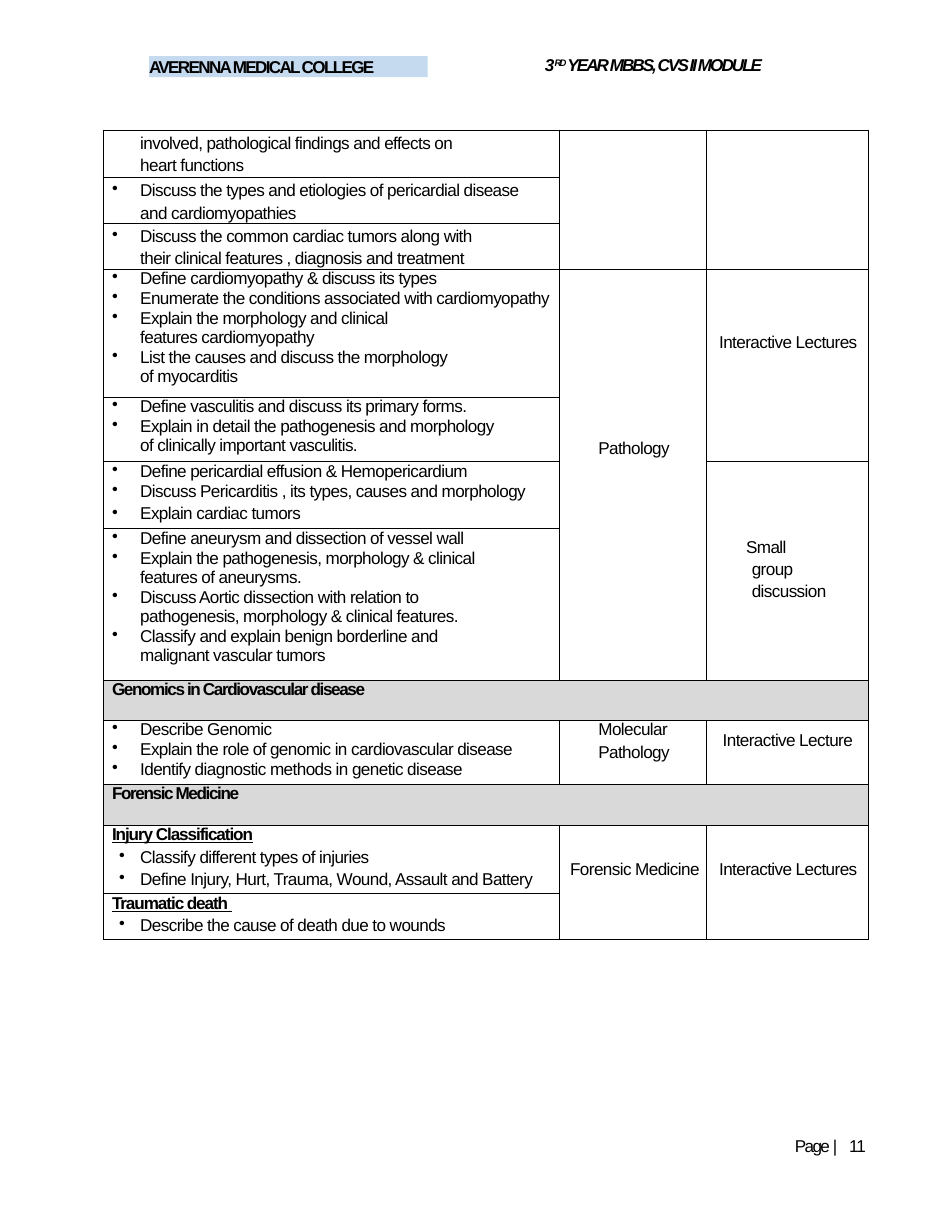
from lxml.etree import SubElement
from pptx import Presentation
from pptx.dml.color import RGBColor
from pptx.enum.text import MSO_ANCHOR, MSO_AUTO_SIZE, PP_ALIGN
from pptx.oxml.ns import qn
from pptx.util import Cm, Pt

# Paragraph styles: left and first indent in cm, spacing in points
LOOKS = {
    "plain": dict(),
    "wide": dict(left=0.84, lead=14.6),
    "dot": dict(left=0.84, first=-0.64, gap=0.6, dot=True),
    "loose": dict(left=0.84, first=-0.64, lead=14.6, gap=0.2, dot=True),
    "late": dict(left=0.84, first=-0.64, gap=2.4, dot=True),
    "inner": dict(left=0.84, first=-0.48, gap=2, dot=True),
    "head": dict(left=0.2, bold=True, track=-0.9),
    "under": dict(left=0.2, bold=True, underline=True, track=-0.7),
    "group": dict(left=1.02, first=-0.13, lead=1.17),
    "mid": dict(left=0.89, gap=2.2),
}

COLS = [10.34, 3.35, 3.66]
ROWS = [1.07, 1.04, 1.04, 2.9, 1.47, 1.52, 3.43, 0.91, 1.45, 0.94, 1.55, 1.04]

# First column, one list of (style, text) for each row
TOPICS = [
    [("wide", "involved, pathological findings and effects on\vheart functions")],
    [("loose", "Discuss the types and etiologies of pericardial disease\vand cardiomyopathies")],
    [("loose", "Discuss the common cardiac tumors along with\v"
               "their clinical features , diagnosis and treatment")],
    [("dot", "Define cardiomyopathy & discuss its types"),
     ("dot", "Enumerate the conditions associated with cardiomyopathy"),
     ("dot", "Explain the morphology and clinical\vfeatures cardiomyopathy"),
     ("dot", "List the causes and discuss the morphology\vof myocarditis")],
    [("dot", "Define vasculitis and discuss its primary forms."),
     ("dot", "Explain in detail the pathogenesis and morphology\v"
             "of clinically important vasculitis.")],
    [("dot", "Define pericardial effusion & Hemopericardium"),
     ("dot", "Discuss Pericarditis , its types, causes and morphology"),
     ("late", "Explain cardiac tumors")],
    [("dot", "Define aneurysm and dissection of vessel wall"),
     ("dot", "Explain the pathogenesis, morphology & clinical\vfeatures of aneurysms."),
     ("dot", "Discuss Aortic dissection with relation to\v"
             "pathogenesis, morphology & clinical features."),
     ("dot", "Classify and explain benign borderline and\vmalignant vascular tumors")],
    [("head", "Genomics in Cardiovascular disease")],
    [("dot", "Describe Genomic"),
     ("dot", "Explain the role of genomic in cardiovascular disease"),
     ("dot", "Identify diagnostic methods in genetic disease")],
    [("head", "Forensic Medicine")],
    [("under", "Injury Classification"),
     ("inner", "Classify different types of injuries"),
     ("inner", "Define Injury, Hurt, Trauma, Wound, Assault and Battery")],
    [("under", "Traumatic death "),
     ("inner", "Describe the cause of death due to wounds")],
]

# Other columns: row, column, rows spanned, left and bottom inset, paragraphs
SIDES = [
    (0, 1, 3, 0, 0, []),
    (0, 2, 3, 0, 0, []),
    (3, 1, 4, 0.89, 1.17, [("plain", "Pathology")]),
    (3, 2, 2, 0.28, 1.02, [("plain", "Interactive Lectures")]),
    (5, 2, 2, 0, 0.13, [("group", "Small\vgroup\vdiscussion")]),
    (8, 1, 1, 0, 0.5, [("mid", "Molecular"), ("mid", "Pathology")]),
    (8, 2, 1, 0.36, 0.5, [("plain", "Interactive Lecture")]),
    (10, 1, 2, 0.25, 0.58, [("plain", "Forensic Medicine")]),
    (10, 2, 2, 0.28, 0.58, [("plain", "Interactive Lectures")]),
]
BANDS = [7, 9]


def tint(code):
    return RGBColor.from_string(code)


class Page:
    font = dict(name="Arial", size=Pt(11), bold=False, italic=False, underline=False)
    ink, rule, band, banner = "000000", "000000", "D9D9D9", "C5D9EF"

    def __init__(self, deck):
        self.slide = deck.slides.add_slide(deck.slide_layouts[5])

    def run(self, para, text, track=-0.4, base=0, **form):
        for num, line in enumerate(text.split("\v")):
            if num:
                para.add_line_break()
            run = para.add_run()
            run.text = line
            for key, val in {**self.font, **form}.items():
                setattr(run.font, key, val)
            run.font.color.rgb = tint(self.ink)
            props = run._r.get_or_add_rPr()
            props.set("spc", str(round(track * 100)))
            if base:
                props.set("baseline", str(base * 1000))

    def para(self, para, text, left=0, first=0, gap=0, lead=1.0, dot=False, **form):
        size = lead if lead < 5 else Pt(lead)
        for key, val in dict(alignment=PP_ALIGN.LEFT, space_before=Pt(gap),
                             line_spacing=size).items():
            setattr(para, key, val)
        props = para._p.get_or_add_pPr()
        props.set("marL", str(Cm(left)))
        props.set("indent", str(Cm(first)))
        if dot:
            SubElement(props, qn("a:buChar"), char="•")
        self.run(para, text, **form)

    def frame(self, frame):
        for key, val in dict(margin_left=0, margin_right=0, margin_top=0,
                             margin_bottom=0, word_wrap=True,
                             auto_size=MSO_AUTO_SIZE.NONE,
                             vertical_anchor=MSO_ANCHOR.TOP).items():
            setattr(frame, key, val)
        return frame.paragraphs[0]

    def title(self, text, *place):
        shape = self.slide.shapes.title
        for key, val in zip(("left", "top", "width", "height"), place):
            setattr(shape, key, Cm(val))
        shape.fill.solid()
        shape.fill.fore_color.rgb = tint(self.banner)
        self.para(self.frame(shape.text_frame), text, bold=True, track=-1.1)

    def label(self, parts, *place):
        box = self.slide.shapes.add_textbox(*map(Cm, place))
        para = self.frame(box.text_frame)
        for text, form in parts:
            self.run(para, text, **form)

    def cell(self, cell, items, left=0, low=0, anchor=MSO_ANCHOR.TOP):
        for key, val in dict(margin_left=Cm(left), margin_right=0, margin_top=0,
                             margin_bottom=Cm(low), vertical_anchor=anchor).items():
            setattr(cell, key, val)
        frame = cell.text_frame
        for num, (look, text) in enumerate(items):
            para = frame.add_paragraph() if num else frame.paragraphs[0]
            self.para(para, text, **LOOKS[look])

    def edge(self, cell):
        props = cell._tc.get_or_add_tcPr()
        for side in ("lnL", "lnR", "lnT", "lnB"):
            line = SubElement(props, qn("a:" + side), w=str(Pt(0.5)))
            fill = SubElement(line, qn("a:solidFill"))
            SubElement(fill, qn("a:srgbClr"), val=self.rule)

    def table(self, left, top):
        table = self.slide.shapes.add_table(
            len(ROWS), len(COLS), Cm(left), Cm(top), Cm(sum(COLS)), Cm(sum(ROWS))).table
        table.first_row = table.horz_banding = False
        for col, size in zip(table.columns, COLS):
            col.width = Cm(size)
        for row, size in zip(table.rows, ROWS):
            row.height = Cm(size)
        for num, row in enumerate(table.rows):
            for cell in row.cells:
                self.edge(cell)
                if num in BANDS:
                    cell.fill.solid()
                    cell.fill.fore_color.rgb = tint(self.band)
                else:
                    cell.fill.background()
        # Merged cells
        for num in BANDS:
            table.cell(num, 0).merge(table.cell(num, len(COLS) - 1))
        for row, col, span, left, low, items in SIDES:
            cell = table.cell(row, col)
            if span > 1:
                cell.merge(table.cell(row + span - 1, col))
            self.cell(cell, items, left, low, MSO_ANCHOR.MIDDLE)
        # Topics
        for num, items in enumerate(TOPICS):
            self.cell(table.cell(num, 0), items)


def main():
    deck = Presentation()
    deck.slide_width, deck.slide_height = Cm(21.59), Cm(27.94)
    page = Page(deck)

    # Header
    page.title("AVERENNA MEDICAL COLLEGE", 3.38, 1.27, 6.32, 0.48)
    slant = dict(bold=True, italic=True)
    page.label([("3", dict(track=-0.8, **slant)),
                ("RD ", dict(track=-1.1, base=32, **{**slant, "size": Pt(10.5)})),
                ("YEAR MBBS, CVS II MODULE", dict(track=-1.3, **slant))],
               12.36, 1.24, 7.21, 0.5)

    # Learning outcomes
    page.table(2.34, 2.95)

    # Footer
    page.label([("Page ", dict(track=-1.1)), ("| ", dict(track=2.2)),
                ("11", dict(track=-0.6))], 18.03, 25.74, 1.8, 0.46)
    deck.save("out.pptx")


if __name__ == "__main__":
    main()
